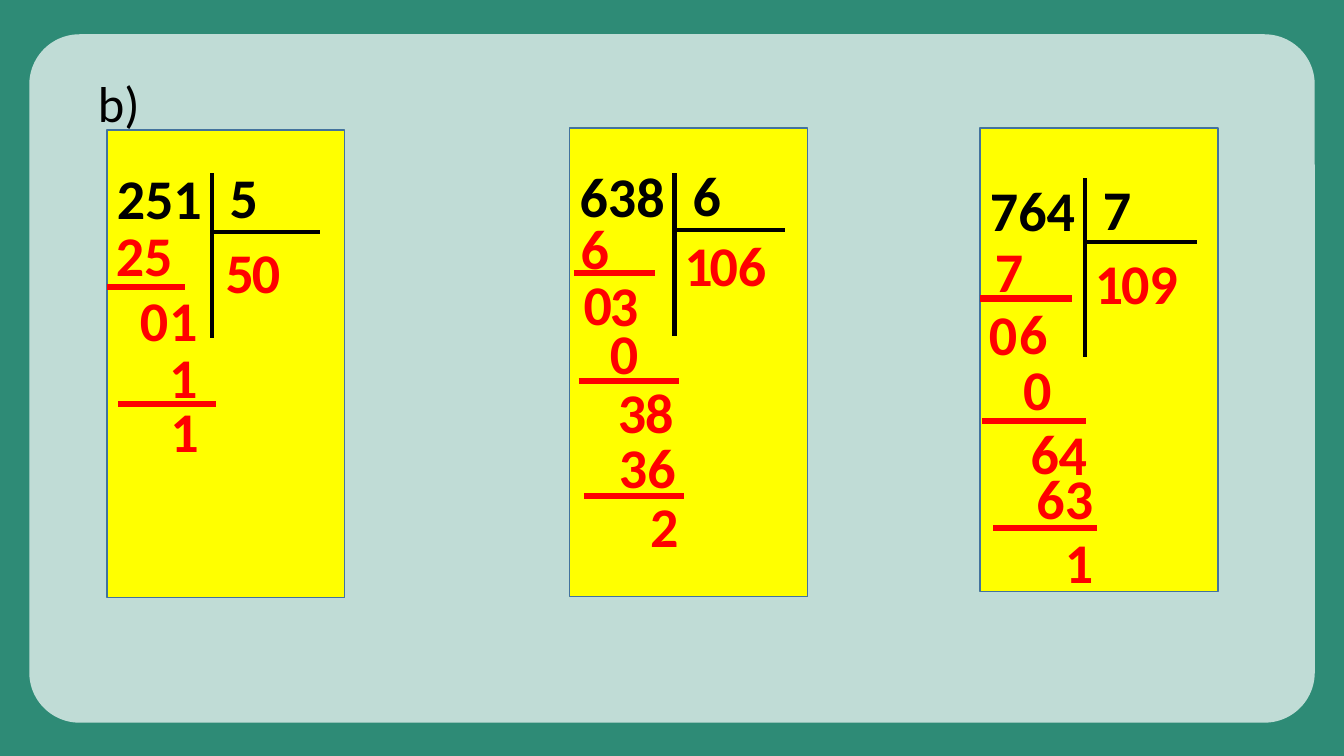
from pptx import Presentation
from pptx.dml.color import RGBColor
from pptx.enum.shapes import MSO_CONNECTOR, MSO_SHAPE
from pptx.enum.text import MSO_ANCHOR, MSO_AUTO_SIZE, PP_ALIGN
from pptx.oxml.ns import qn
from pptx.util import Inches, Pt
from lxml import etree

LINE = MSO_CONNECTOR.STRAIGHT
LEFT, RIGHT = PP_ALIGN.LEFT, PP_ALIGN.RIGHT
TOP = MSO_ANCHOR.TOP
FIT, NO_FIT = MSO_AUTO_SIZE.SHAPE_TO_FIT_TEXT, MSO_AUTO_SIZE.NONE

COLORS = {"green": "2E8B76", "white": "FFFFFF", "yellow": "FFFF00",
          "border": "43739E", "black": "000000", "red": "FF0000"}
RGB = {name: RGBColor.from_string(value) for name, value in COLORS.items()}
DIGIT_FORMAT = {"name": "Calibri", "size": Pt(40), "bold": True}
TITLE_FORMAT = {"name": "Calibri", "size": Pt(36), "bold": False}
DIGIT_HEIGHT = 0.77
CARD_WIDTH = 2.36

# Each division: card, problem, bracket, worked digits in two stages, rules.
# Digits are (text, left, top, width, alignment if right); rules are (left, right, y).
DIVISIONS = [
    {"card": (1.06, 1.29, 4.64), "problem": ("251", "5", 1.56),
     "bracket": (2.1, 1.72, 3.35), "bar": (2.09, 3.17, 2.3),
     "first": [("5", 2.14, 2.31, 0.79), ("25", 1.05, 2.14, 0.79),
               ("0", 1.29, 2.78, 0.43), ("1", 1.58, 2.78, 0.79),
               ("0", 2.4, 2.31, 0.79), ("1", 1.58, 3.35, 0.79),
               ("1", 1.59, 3.88, 0.79)],
     "later": [],
     "rules": [(1.06, 1.84, 2.85), (1.17, 2.14, 4.01)]},
    {"card": (5.65, 1.27, 4.65), "problem": ("638", "6", 1.54),
     "bracket": (6.69, 1.72, 3.33), "bar": (6.69, 7.79, 2.28),
     "first": [("1", 6.69, 2.24, 0.79), ("6", 5.66, 2.07, 0.79),
               ("0", 5.69, 2.62, 0.48), ("3", 5.95, 2.63, 0.79),
               ("0", 6.94, 2.24, 0.79), ("3", 6.03, 3.7, 0.92)],
     "later": [("0", 5.95, 3.11, 0.79), ("8", 6.3, 3.7, 0.92),
               ("6", 7.22, 2.24, 0.79), ("36", 6.04, 4.24, 0.92),
               ("2", 6.35, 4.83, 0.92)],
     "rules": [(5.69, 6.5, 2.71), (5.74, 6.73, 3.78), (5.79, 6.78, 4.92)]},
    {"card": (9.72, 1.27, 4.6), "problem": ("764", "7", 1.68),
     "bracket": (10.76, 1.77, 3.54), "bar": (10.77, 11.87, 2.4),
     "first": [("1", 10.76, 2.42, 0.79), ("7", 9.77, 2.3, 0.79),
               ("0", 9.71, 2.92, 0.41), ("6", 10.01, 2.91, 0.79),
               ("0", 11.02, 2.42, 0.79), ("0", 10.05, 3.47, 0.79),
               ("6", 10.09, 4.1, 0.51, RIGHT)],
     "later": [("4", 10.4, 4.11, 0.35, RIGHT), ("9", 11.3, 2.42, 0.79),
               ("63", 9.79, 4.55, 1.15, RIGHT), ("1", 10.15, 5.18, 0.79, RIGHT)],
     "rules": [(9.72, 10.63, 2.96), (9.74, 10.77, 4.18), (9.85, 10.88, 5.24)]},
]


def add_digits(shapes, color, text, left, top, width, align=LEFT):
    box = shapes.add_textbox(Inches(left), Inches(top), Inches(width), Inches(DIGIT_HEIGHT))
    box.text_frame.word_wrap = True
    box.text_frame.auto_size = FIT
    para = box.text_frame.paragraphs[0]
    para.alignment = align
    span = para.add_run()
    span.text = text
    for key, value in DIGIT_FORMAT.items():
        setattr(span.font, key, value)
    span.font.color.rgb = RGB[color]


def add_rule(shapes, color, weight, x1, y1, x2, y2):
    rule = shapes.add_connector(LINE, Inches(x1), Inches(y1), Inches(x2), Inches(y2))
    rule.line.color.rgb = RGB[color]
    rule.line.width = Pt(weight)
    etree.SubElement(rule.element.spPr, qn("a:effectLst"))


deck = Presentation()
deck.slide_width, deck.slide_height = Inches(13.33), Inches(7.5)
page = deck.slides.add_slide(deck.slide_layouts[5])
page.background.fill.solid()
page.background.fill.fore_color.rgb = RGB["green"]

# Translucent panel
panel = page.shapes.add_shape(MSO_SHAPE.ROUNDED_RECTANGLE, Inches(0.29), Inches(0.34),
                              Inches(12.75), Inches(6.83))
panel.adjustments[0] = 0.073
panel.shadow.inherit = False
panel.fill.solid()
panel.fill.fore_color.rgb = RGB["white"]
panel.line.fill.background()
panel_color = panel.element.spPr.find(qn("a:solidFill"))[0]
etree.SubElement(panel_color, qn("a:alpha"), val="70000")

# Cards with the division brackets
for division in DIVISIONS:
    left, top, height = division["card"]
    dividend, divisor, problem_top = division["problem"]
    bracket_x, bracket_top, bracket_bottom = division["bracket"]
    bar_left, bar_right, bar_y = division["bar"]
    group = page.shapes.add_group_shape()
    card = group.shapes.add_shape(MSO_SHAPE.RECTANGLE, Inches(left), Inches(top),
                                  Inches(CARD_WIDTH), Inches(height))
    card.shadow.inherit = False
    card.fill.solid()
    card.fill.fore_color.rgb = RGB["yellow"]
    card.line.color.rgb = RGB["border"]
    card.line.width = Pt(1)
    add_digits(group.shapes, "black", divisor, left + 1.12, problem_top, 0.42)
    add_digits(group.shapes, "black", dividend, left, problem_top + 0.01, 1.09)
    add_rule(group.shapes, "black", 3, bar_left, bar_y, bar_right, bar_y)
    add_rule(group.shapes, "black", 3, bracket_x, bracket_top, bracket_x, bracket_bottom)

# First stage of the solutions, with the subtraction rules
for division in DIVISIONS:
    for digits in division["first"]:
        add_digits(page.shapes, "red", *digits)
    for left, right, y in division["rules"]:
        add_rule(page.shapes, "red", 4.5, left, y, right, y)

# Exercise label, brought in front of the cards
title = page.shapes.title
title.left, title.top = Inches(0.87), Inches(0.67)
title.width, title.height = Inches(0.66), Inches(0.71)
title.text_frame.text = "b)"
title.text_frame.word_wrap = True
title.text_frame.auto_size = NO_FIT
title.text_frame.vertical_anchor = TOP
para = title.text_frame.paragraphs[0]
para.alignment = LEFT
span = para.runs[0]
for key, value in TITLE_FORMAT.items():
    setattr(span.font, key, value)
span.font.color.rgb = RGB["black"]
page.shapes.element.append(title.element)

# Later stage of the solutions
for division in DIVISIONS:
    for digits in division["later"]:
        add_digits(page.shapes, "red", *digits)

deck.save("out.pptx")
